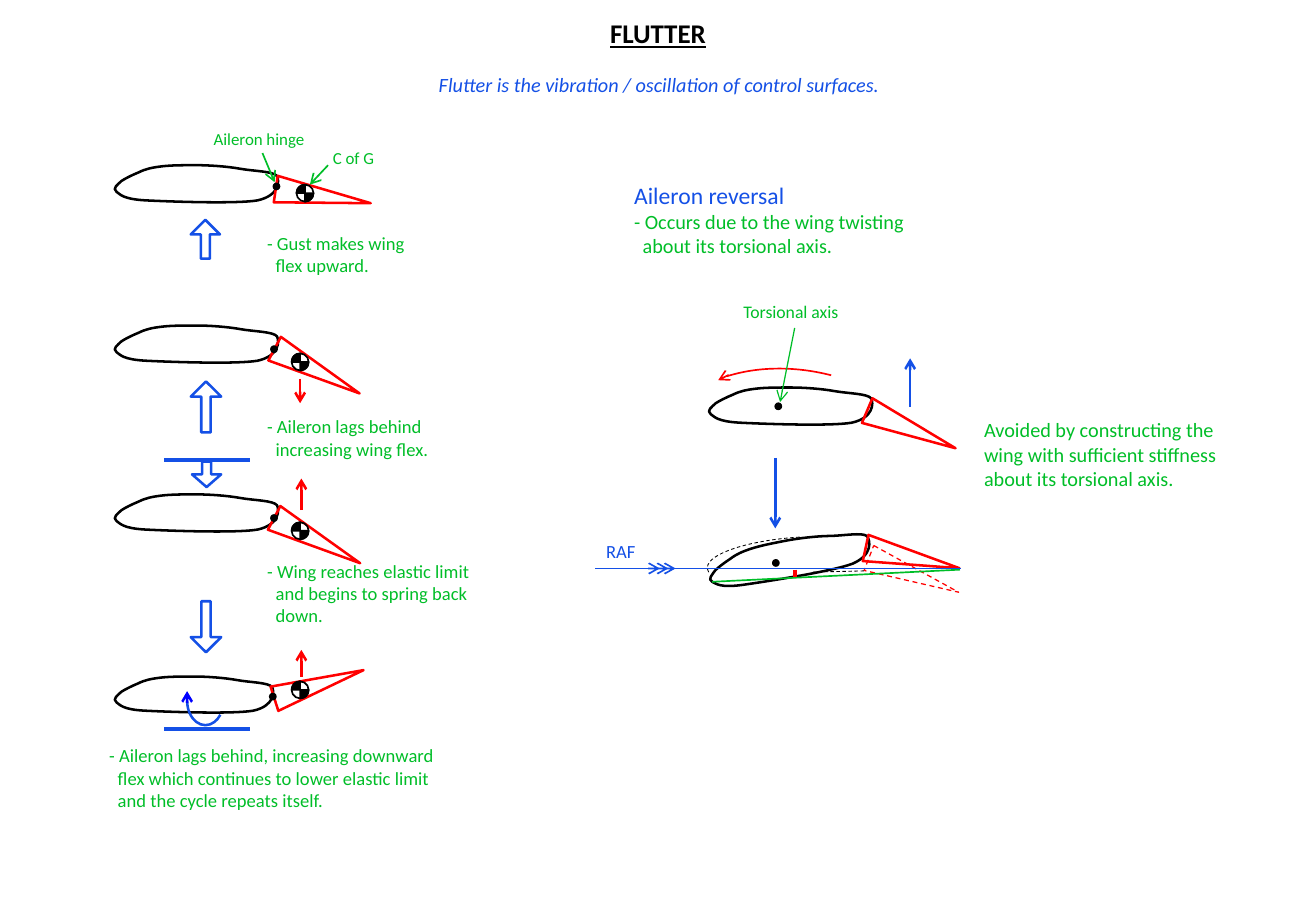
from lxml import etree
from pptx import Presentation
from pptx.dml.color import RGBColor
from pptx.enum.dml import MSO_LINE
from pptx.enum.shapes import MSO_CONNECTOR, MSO_SHAPE
from pptx.enum.text import MSO_ANCHOR, MSO_AUTO_SIZE, PP_ALIGN
from pptx.oxml.ns import qn
from pptx.util import Inches, Pt

TRIANGLE, OVAL = MSO_SHAPE.ISOSCELES_TRIANGLE, MSO_SHAPE.OVAL
ARC, UP_ARROW = MSO_SHAPE.ARC, MSO_SHAPE.UP_ARROW
STRAIGHT, DASH = MSO_CONNECTOR.STRAIGHT, MSO_LINE.DASH
LEFT, CENTER = PP_ALIGN.LEFT, PP_ALIGN.CENTER
COLORS = {"black": "000000", "red": "FF0000", "blue": "1450E6",
          "green": "00BE28", "pure blue": "0000FF"}

# ---- Text: box, alignment, lines of (text, size, colour, extra format) ----
TITLE = ((0, 0.09, 10.83, 0.37), CENTER,
         [("FLUTTER", 16, "black", {"bold": True, "underline": True})])


def note(box, size, *lines, color="green"):
    return box, LEFT, [(line, size, color, {}) for line in lines]


TEXTS = [
    note((2.1, 1.86, 1.93, 0.47), 11, "- Gust makes wing", "flex upward."),
    note((2.1, 3.37, 2.2, 0.47), 11, "- Aileron lags behind", "increasing wing flex."),
    note((2.1, 4.56, 2.55, 0.66), 11, "- Wing reaches elastic limit",
         "and begins to spring back", "down."),
    note((0.8, 6.08, 3.65, 0.66), 11, "- Aileron lags behind, increasing downward",
         "flex which continues to lower elastic limit", "and the cycle repeats itself."),
    note((1.66, 1.01, 1.04, 0.27), 10, "Aileron hinge"),
    note((2.64, 1.17, 0.71, 0.27), 10, "C of G"),
    ((2.84, 0.55, 5.17, 0.3), CENTER,
     [("Flutter is the vibration / oscillation of control surfaces.",
       12, "blue", {"italic": True})]),
    ((5.12, 1.44, 3.18, 0.74), LEFT,
     [("Aileron reversal", 14, "blue", {}),
      ("- Occurs due to the wing twisting", 12, "green", {}),
      ("about its torsional axis.", 12, "green", {})]),
    note((8, 3.39, 2.16, 0.91), 12, "Avoided by constructing the wing with "
         "sufficient stiffness about its torsional axis."),
    note((4.89, 4.4, 0.54, 0.29), 11, "RAF", color="blue"),
    note((6.02, 2.43, 1.17, 0.28), 10.5, "Torsional axis"),
]

# ---- Outlines: size, then path steps from the top left corner ----
WING_SIZE = (1.34, 0.31)
WING_STEPS = [
    ("moveTo", (1.18, 0.29)),
    ("cubicBezTo", (1, 0.32), (0.46, 0.3), (0.26, 0.29)),
    ("cubicBezTo", (0.07, 0.28), (0.05, 0.24), (0.02, 0.22)),
    ("cubicBezTo", (-0.02, 0.19), (0.03, 0.16), (0.06, 0.13)),
    ("cubicBezTo", (0.09, 0.11), (0.15, 0.08), (0.2, 0.06)),
    ("cubicBezTo", (0.26, 0.03), (0.31, 0.02), (0.39, 0.01)),
    ("cubicBezTo", (0.47, 0), (0.57, 0), (0.68, 0)),
    ("cubicBezTo", (0.78, 0), (0.93, 0.01), (1.04, 0.03)),
    ("cubicBezTo", (1.15, 0.05), (1.31, 0.05), (1.34, 0.09)),
    ("cubicBezTo", (1.36, 0.13), (1.36, 0.25), (1.18, 0.29)),
    ("close",)]
RADIUS = 0.07
QUARTER_STEPS = [
    ("moveTo", (RADIUS, RADIUS)), ("lnTo", (0, RADIUS)),
    ("cubicBezTo", (0, 0.03), (0.03, 0), (RADIUS, 0)), ("close",)]

# ---- Drawing parts ----
# left, top, scale, rotation
WINGS = [(0.94, 2.68, 1, 0), (0.94, 5.57, 0.97, 0), (0.94, 1.36, 1, 0),
         (0.94, 4.07, 1, 0), (5.83, 3.19, 1, 0), (5.82, 4.45, 1, 349.1)]
# box, rotation, line width, dash
AILERONS = [((2.5, 2.66, 0.22, 0.79), 117.8, 1.5, None),
            ((2.52, 5.25, 0.21, 0.77), 72.2, 1.5, None),
            ((2.55, 1.22, 0.22, 0.79), 98.5, 1.5, None),
            ((2.5, 4.05, 0.22, 0.8), 117.8, 1.5, None),
            ((7.39, 3.14, 0.22, 0.79), 113.1, 1.5, None),
            ((7.41, 4.34, 0.22, 0.79), 110.9, 0.75, DASH),
            ((7.4, 4.2, 0.22, 0.79), 102.2, 1.5, None)]
GRAVITY_CENTERS = [(2.51, 1.59), (2.47, 2.98), (2.47, 4.37), (2.47, 5.68)]
HINGES = [(2.25, 1.51), (2.23, 2.85), (2.23, 4.24), (2.22, 5.71),
          (6.38, 3.32), (6.36, 4.61)]
# box, rotation
FLEX_ARROWS = [((1.57, 1.81, 0.24, 0.32), 0), ((1.57, 3.14, 0.25, 0.42), 0),
               ((1.58, 3.8, 0.24, 0.21), 180), ((1.57, 4.95, 0.25, 0.42), 180)]
# box, rotation, adjustments, colour, width, dash
ARCS = [((1.54, 5.57, 0.3, 0.4), 180, (133.69, 0), "blue", 1.5, None),
        ((6.4, 3.84, 0.43, 1.59), 266.9, (160.56, 0), "black", 0.5, DASH),
        ((5.38, 3.06, 2.47, 1.73), 13.8, (131.3, 162.77), "red", 1, None)]
# x1, y1, x2, y2, colour, width
AIRFLOW_TOP = 4.68
ARROWS = [
    (2.48, 5.57, 2.48, 5.35, "red", 1.5), (2.47, 3.12, 2.47, 3.32, "red", 1.5),
    (2.48, 4.2, 2.48, 3.94, "red", 1.5), (1.54, 5.76, 1.54, 5.69, "pure blue", 1.5),
    (2.7, 1.36, 2.55, 1.52, "green", 1), (2.16, 1.26, 2.26, 1.5, "green", 1),
    (5.99, 3.09, 5.91, 3.13, "red", 1), (7.49, 3.35, 7.49, 2.95, "blue", 1.5),
    (6.54, 2.7, 6.42, 3.31, "green", 0.75), (6.38, 3.77, 6.38, 4.35, "blue", 1.5),
] + [(x, AIRFLOW_TOP, x + 0.32, AIRFLOW_TOP, "blue", 1) for x in (5.24, 5.18, 5.11)]
LINES = [
    (1.35, 3.79, 2.06, 3.79, "blue", 2.25), (1.35, 6, 2.06, 6, "blue", 2.25),
    (5.86, 4.79, 7.9, 4.69, "green", 1), (7.11, 4.7, 6.69, 4.71, "black", 0.5, DASH),
    (4.9, AIRFLOW_TOP, 7.91, AIRFLOW_TOP, "blue", 1),
    (6.54, 4.69, 6.54, 4.75, "red", 2.25)]

presentation = Presentation()
presentation.slide_width, presentation.slide_height = Inches(10.83), Inches(7.5)
slide = presentation.slides.add_slide(presentation.slide_layouts[5])


def rgb(name):
    return RGBColor.from_string(COLORS[name])


def style_line(line, color, width, dash):
    line.color.rgb = rgb(color)
    line.width = Pt(width)
    if dash:
        line.dash_style = dash


def style(shape, color, width, dash=None, rotation=0, filled=False):
    shape.shadow.inherit = False
    shape.rotation = rotation
    if filled:
        shape.fill.solid()
        shape.fill.fore_color.rgb = rgb(color)
    else:
        shape.fill.background()
    style_line(shape.line, color, width, dash)


def add_preset(kind, box, adjustments=(), **look):
    shape = slide.shapes.add_shape(kind, *map(Inches, box))
    for index, value in enumerate(adjustments):
        shape.adjustments[index] = value
    style(shape, **look)


def add_outline(left, top, size, steps, scale=1, **look):
    """Freeform whose frame has the given size and whose path has curves."""
    width, height = (Inches(length * scale) for length in size)
    builder = slide.shapes.build_freeform(0, 0, scale=1.0)
    builder.add_line_segments([(width, height)])
    shape = builder.convert_to_shape(Inches(left), Inches(top))
    outline = next(shape._element.iter(qn("a:path")))
    for child in list(outline):
        outline.remove(child)
    for kind, *points in steps:
        step = etree.SubElement(outline, qn("a:" + kind))
        for x, y in points:
            etree.SubElement(step, qn("a:pt"), x=str(Inches(x * scale)),
                             y=str(Inches(y * scale)))
    style(shape, **look)


def add_line(x1, y1, x2, y2, color, width, dash=None, head=False):
    connector = slide.shapes.add_connector(STRAIGHT, *map(Inches, (x1, y1, x2, y2)))
    style_line(connector.line, color, width, dash)
    if head:
        etree.SubElement(connector.line._get_or_add_ln(), qn("a:tailEnd"), type="arrow")
    etree.SubElement(connector._element.spPr, qn("a:effectLst"))


def fill_text(shape, box, alignment, lines):
    shape.left, shape.top, shape.width, shape.height = map(Inches, box)
    frame = shape.text_frame
    frame.word_wrap = True
    frame.auto_size = MSO_AUTO_SIZE.SHAPE_TO_FIT_TEXT
    frame.vertical_anchor = MSO_ANCHOR.TOP
    in_item = False
    for index, (text, size, color, extra) in enumerate(lines):
        paragraph = frame.add_paragraph() if index else frame.paragraphs[0]
        paragraph.alignment = alignment
        if in_item:  # lines after the dash are indented
            paragraph._p.get_or_add_pPr().set("marL", str(Inches(0.07)))
        in_item = in_item or text.startswith("-")
        run = paragraph.add_run()
        run.text = text
        for name, value in {"name": "Calibri", "size": Pt(size), **extra}.items():
            setattr(run.font, name, value)
        run.font.color.rgb = rgb(color)


# Wings and ailerons
for left, top, scale, rotation in WINGS:
    add_outline(left, top, WING_SIZE, WING_STEPS, scale,
                color="black", width=1.5, rotation=rotation)
for box, rotation, width, dash in AILERONS:
    add_preset(TRIANGLE, box, color="red", width=width, dash=dash, rotation=rotation)

# Centre of gravity markers: a ring with two opposite black quarters
for x, y in GRAVITY_CENTERS:
    add_preset(OVAL, (x - RADIUS, y - RADIUS, 2 * RADIUS, 2 * RADIUS),
               color="black", width=1)
    for offset, rotation in ((0, 180), (RADIUS, 0)):
        add_outline(x - offset, y - offset, (RADIUS, RADIUS), QUARTER_STEPS,
                    color="black", width=1, rotation=rotation, filled=True)

# Flex arrows, arcs, hinges and lines
for box, rotation in FLEX_ARROWS:
    add_preset(UP_ARROW, box, (0.31, 0.5), color="blue", width=1.5, rotation=rotation)
for box, rotation, adjustments, color, width, dash in ARCS:
    add_preset(ARC, box, adjustments, color=color, width=width, dash=dash, rotation=rotation)
for left, top in HINGES:
    add_preset(OVAL, (left, top, 0.05, 0.05), color="black", width=1, filled=True)
for line in LINES:
    add_line(*line)
for arrow in ARROWS:
    add_line(*arrow, head=True)

# Title and notes
fill_text(slide.shapes.title, *TITLE)
for box, alignment, lines in TEXTS:
    fill_text(slide.shapes.add_textbox(0, 0, 0, 0), box, alignment, lines)

presentation.save("out.pptx")
